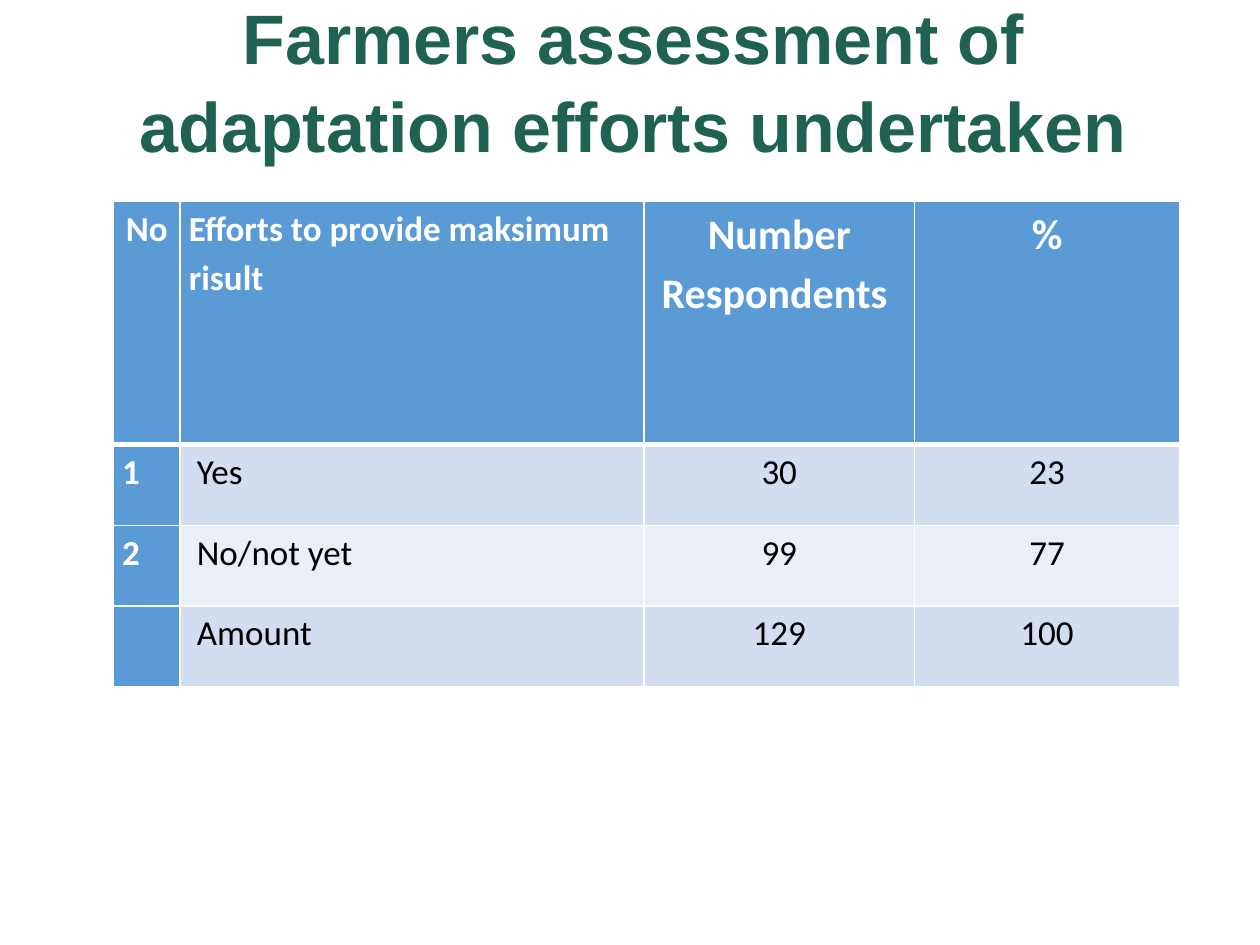
from dataclasses import dataclass

from lxml import etree
from pptx import Presentation
from pptx.dml.color import RGBColor
from pptx.enum.text import MSO_ANCHOR, MSO_AUTO_SIZE, PP_ALIGN
from pptx.oxml.ns import qn
from pptx.util import Inches, Pt

LEFT, CENTER, JUSTIFY = PP_ALIGN.LEFT, PP_ALIGN.CENTER, PP_ALIGN.JUSTIFY
TITLE_ONLY = 5
GREEN, BLUE, WHITE, BLACK = "206252", "5B9BD5", "FFFFFF", "000000"
BANDS = ("D2DEEF", "EAEFF7")
COLUMN_WIDTHS = (0.53, 3.68, 2.15, 2.1)
HEADER_HEIGHT, BODY_HEIGHT = 1.93, 0.64
THIN, THICK = 1, 3


@dataclass
class Entry:
    text: str
    align: PP_ALIGN
    size: int = 20


HEADER = (
    Entry("No", CENTER),
    Entry("Efforts to provide maksimum risult", LEFT),
    Entry("Number Respondents ", CENTER, 24),
    Entry("%", CENTER, 24),
)
ANSWERS = (
    ("1", " Yes", "30", "23"),
    ("2", " No/not yet", "99", "77"),
    ("", " Amount", "129", "100"),
)
BODY_ALIGNS = (JUSTIFY, JUSTIFY, CENTER, CENTER)


def rgb(value: str) -> RGBColor:
    return RGBColor.from_string(value)


def format_font(font, name: str, size: int, color: str, bold: bool) -> None:
    font.name, font.size, font.bold = name, Pt(size), bold
    font.color.rgb = rgb(color)


def add_borders(cell, top: int, bottom: int) -> None:
    """Draw white borders; call before filling, as lines precede the fill."""
    properties = cell._tc.get_or_add_tcPr()
    for side, width in (("L", THIN), ("R", THIN), ("T", top), ("B", bottom)):
        line = etree.SubElement(properties, qn(f"a:ln{side}"), w=str(Pt(width)))
        fill = etree.SubElement(line, qn("a:solidFill"))
        etree.SubElement(fill, qn("a:srgbClr"), val=WHITE)


def fill_cell(cell, entry: Entry, row: int, column: int) -> None:
    strong = row == 0 or column == 0
    add_borders(cell, THICK if row == 1 else THIN, THICK if row == 0 else THIN)
    cell.fill.solid()
    cell.fill.fore_color.rgb = rgb(BLUE if strong else BANDS[(row - 1) % 2])
    cell.margin_left = cell.margin_right = Inches(0.07)
    cell.margin_top = cell.margin_bottom = 0
    cell.vertical_anchor = MSO_ANCHOR.TOP
    para = cell.text_frame.paragraphs[0]
    para.text, para.alignment, para.line_spacing = entry.text, entry.align, 1.15
    format_font(para.font, "Calibri", entry.size, WHITE if strong else BLACK, strong)


def add_title(slide) -> None:
    title = slide.shapes.title
    title.left, title.top = Inches(0.9), Inches(0.44)
    title.width, title.height = Inches(8.25), Inches(0.93)
    frame = title.text_frame
    frame.text = "Farmers assessment of adaptation efforts undertaken"
    frame.word_wrap = True
    frame.auto_size = MSO_AUTO_SIZE.NONE
    frame.vertical_anchor = MSO_ANCHOR.BOTTOM
    para = frame.paragraphs[0]
    para.alignment, para.line_spacing = CENTER, 1.04
    format_font(para.font, "Arial", 40, GREEN, True)


def add_assessment_table(slide) -> None:
    body = [[Entry(text, align) for text, align in zip(answer, BODY_ALIGNS)]
            for answer in ANSWERS]
    rows = [HEADER, *body]
    heights = [HEADER_HEIGHT] + [BODY_HEIGHT] * len(body)
    table = slide.shapes.add_table(
        len(rows), len(COLUMN_WIDTHS), Inches(0.9), Inches(1.6),
        Inches(sum(COLUMN_WIDTHS)), Inches(sum(heights))).table
    table.first_col = True
    for column, width in zip(table.columns, COLUMN_WIDTHS):
        column.width = Inches(width)
    for row, height in zip(table.rows, heights):
        row.height = Inches(height)
    for r, entries in enumerate(rows):
        for c, entry in enumerate(entries):
            fill_cell(table.cell(r, c), entry, r, c)


def main() -> None:
    deck = Presentation()
    deck.slide_width, deck.slide_height = Inches(10), Inches(7.5)
    slide = deck.slides.add_slide(deck.slide_layouts[TITLE_ONLY])
    add_title(slide)
    add_assessment_table(slide)
    deck.save("out.pptx")


if __name__ == "__main__":
    main()
